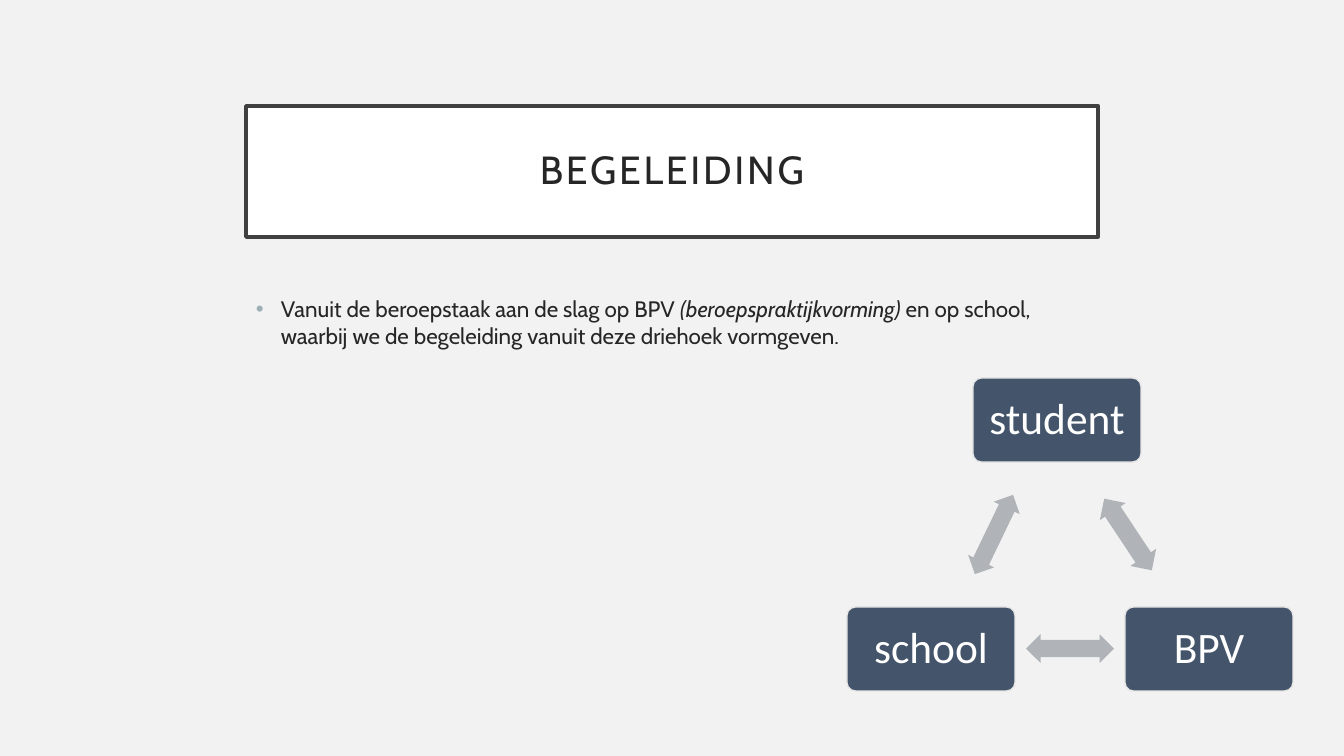
from lxml.etree import SubElement
from pptx import Presentation
from pptx.dml.color import RGBColor
from pptx.enum.shapes import MSO_SHAPE as Shape
from pptx.enum.text import MSO_ANCHOR as Anchor, PP_ALIGN as Align
from pptx.oxml.ns import qn
from pptx.util import Emu, Pt

COLORS = {
    "background": "F2F2F2", "panel": "FFFFFF", "frame": "404040",
    "text": "262626", "bullet": "9BAFB5", "node": "44546A",
    "node_line": "E7E6E6", "node_text": "FFFFFF", "arrow": "B0B4B9",
}
EMU_PER_PX = 914400 / 100.8


def px(*lengths):
    return [Emu(round(length * EMU_PER_PX)) for length in lengths]


def add_run(paragraph, text, size, font_name, color):
    run = paragraph.add_run()
    run.text = text
    run.font.size = Pt(size)
    run.font.name = font_name
    run.font.color.rgb = RGBColor.from_string(COLORS[color])
    return run


presentation = Presentation()
presentation.slide_width, presentation.slide_height = px(1344, 756)
slide = presentation.slides.add_slide(presentation.slide_layouts[6])
slide.background.fill.solid()
slide.background.fill.fore_color.rgb = RGBColor.from_string(COLORS["background"])

# Framed boxes: title and the three corners of the triangle
boxes = [
    (Shape.RECTANGLE, (246, 106, 852, 131), "panel", "frame", 2.5,
     "BEGELEIDING", 28, "Cabin", "text"),
]
for label, left, top in [("student", 973, 378), ("BPV", 1125, 607), ("school", 847, 607)]:
    boxes.append((Shape.ROUNDED_RECTANGLE, (left, top, 168, 84), "node", "node_line", 1,
                  label, 31, "Calibri", "node_text"))

for kind, place, fill, line, line_width, label, size, font_name, color in boxes:
    shape = slide.shapes.add_shape(kind, *px(*place))
    shape.shadow.inherit = False
    shape.fill.solid()
    shape.fill.fore_color.rgb = RGBColor.from_string(COLORS[fill])
    shape.line.color.rgb = RGBColor.from_string(COLORS[line])
    shape.line.width = Pt(line_width)
    frame = shape.text_frame
    frame.word_wrap = True
    frame.vertical_anchor = Anchor.MIDDLE
    frame.margin_left, frame.margin_right = px(13, 13)
    frame.margin_top, frame.margin_bottom = px(13, 13)
    paragraph = frame.paragraphs[0]
    paragraph.alignment = Align.CENTER
    paragraph.line_spacing = 0.9
    run = add_run(paragraph, label, size, font_name, color)
    if kind == Shape.RECTANGLE:
        run.font._element.set("spc", "200")
    else:
        shape.adjustments[0] = 0.1

# Bulleted explanation
body = slide.shapes.add_textbox(*px(246, 290, 852, 342))
body.text_frame.word_wrap = True
paragraph = body.text_frame.paragraphs[0]
indent = px(25)[0]
properties = paragraph._p.get_or_add_pPr()
properties.set("marL", str(indent))
properties.set("indent", str(-indent))
bullet_color = SubElement(properties, qn("a:buClr"))
SubElement(bullet_color, qn("a:srgbClr"), val=COLORS["bullet"])
SubElement(properties, qn("a:buFont"), typeface="Arial")
SubElement(properties, qn("a:buChar"), char="•")
add_run(paragraph, "Vanuit de beroepstaak aan de slag op BPV ", 16, "Cabin", "text")
term = add_run(paragraph, "(beroepspraktijkvorming)", 16, "Cabin", "text")
term.font.italic = True
add_run(paragraph, " en op school, ", 16, "Cabin", "text")
paragraph.add_line_break()
add_run(paragraph, "waarbij we de begeleiding vanuit deze driehoek vormgeven.", 16, "Cabin", "text")

# Double arrows along the sides of the triangle
for left, top, width, height, rotation in [
    (1085, 519, 86, 31, 56.4),
    (1026, 634, 88, 29, 180),
    (950, 520, 88, 29, 295.7),
]:
    arrow = slide.shapes.add_shape(Shape.LEFT_RIGHT_ARROW, *px(left, top, width, height))
    arrow.shadow.inherit = False
    arrow.rotation = rotation
    arrow.adjustments[0] = 0.6
    arrow.adjustments[1] = 0.5
    arrow.fill.solid()
    arrow.fill.fore_color.rgb = RGBColor.from_string(COLORS["arrow"])
    arrow.line.fill.background()

presentation.save("out.pptx")
